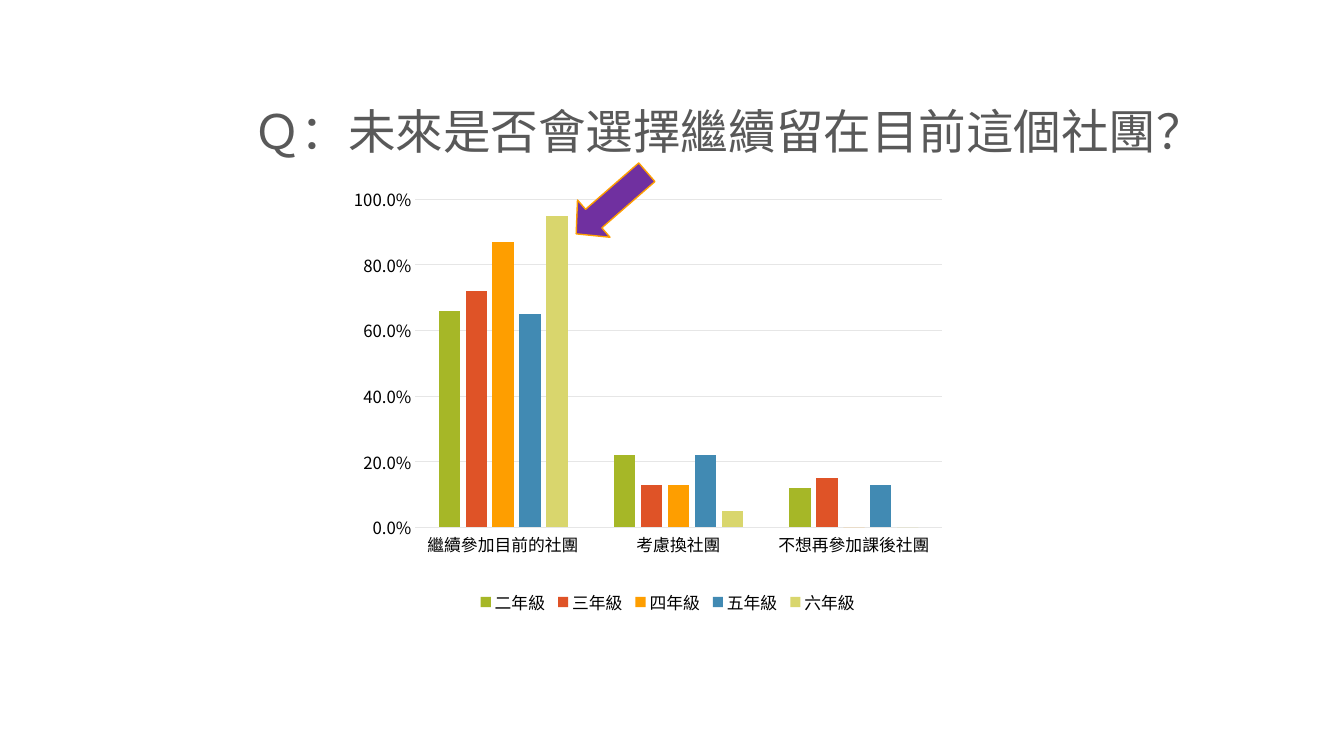
from pptx import Presentation
from pptx.chart.data import CategoryChartData
from pptx.dml.color import RGBColor
from pptx.enum.chart import XL_CHART_TYPE, XL_LEGEND_POSITION, XL_TICK_MARK
from pptx.enum.shapes import MSO_SHAPE
from pptx.enum.text import MSO_ANCHOR, MSO_AUTO_SIZE, PP_ALIGN
from pptx.oxml import parse_xml
from pptx.oxml.ns import nsdecls, qn
from pptx.util import Inches, Pt

GRADES = {
    "二年級": ("A6B727", (0.66, 0.22, 0.12)),
    "三年級": ("DF5327", (0.72, 0.13, 0.15)),
    "四年級": ("FE9E00", (0.87, 0.13, 0)),
    "五年級": ("418AB3", (0.65, 0.22, 0.13)),
    "六年級": ("D9D66D", (0.95, 0.05, 0)),
}
CHOICES = ("繼續參加目前的社團", "考慮換社團", "不想再參加課後社團")


def rgb(hex_color):
    return RGBColor.from_string(hex_color)


def box(*lengths):
    return [Inches(n) for n in lengths]


class SlideBuilder:
    FONT = "Noto Sans CJK SC"
    TITLE, TEXT, GRID = "595959", "000000", "E6E6E6"

    def __init__(self, prs):
        self.slide = prs.slides.add_slide(prs.slide_layouts[5])

    def style_font(self, font, size, color):
        font.size, font.name = Pt(size), self.FONT
        font.color.rgb = rgb(color)

    def set_east_asian(self, rPr):
        rPr.append(parse_xml(f'<a:ea {nsdecls("a")} typeface="{self.FONT}"/>'))

    def style_line(self, line, color, width):
        line.color.rgb = rgb(color)
        line.width = Pt(width)

    def title(self, text, left, top, width, height):
        sp = self.slide.shapes.title
        sp.left, sp.top, sp.width, sp.height = box(left, top, width, height)
        tf = sp.text_frame
        tf.word_wrap = True
        tf.auto_size = MSO_AUTO_SIZE.NONE
        tf.vertical_anchor = MSO_ANCHOR.BOTTOM
        p = tf.paragraphs[0]
        p.alignment, p.line_spacing = PP_ALIGN.LEFT, 0.9
        r = p.add_run()
        r.text = text
        self.style_font(r.font, 34, self.TITLE)
        self.set_east_asian(r.font._element)

    def layout(self, x, y, w, h, inner=False):
        target = '<c:layoutTarget val="inner"/>' if inner else ""
        modes = '<c:xMode val="edge"/><c:yMode val="edge"/>'
        sizes = "".join(f'<c:{tag} val="{val}"/>' for tag, val in zip("xywh", (x, y, w, h)))
        return parse_xml(f'<c:layout {nsdecls("c")}><c:manualLayout>{target}{modes}{sizes}'
                         "</c:manualLayout></c:layout>")

    def column_chart(self, categories, series, left, top, width, height):
        data = CategoryChartData(number_format="0.0%")
        data.categories = categories
        for name, (_, values) in series.items():
            data.add_series(name, values)
        chart = self.slide.shapes.add_chart(
            XL_CHART_TYPE.COLUMN_CLUSTERED, *box(left, top, width, height), data).chart
        chart.has_title = False
        self.style_font(chart.font, 12, self.TEXT)

        # Columns
        plot = chart.plots[0]
        plot.gap_width, plot.overlap, plot.vary_by_categories = 219, -27, False
        for ser, (color, _) in zip(plot.series, series.values()):
            ser.format.fill.solid()
            ser.format.fill.fore_color.rgb = rgb(color)

        # Axes
        for axis in (chart.category_axis, chart.value_axis):
            axis.major_tick_mark = axis.minor_tick_mark = XL_TICK_MARK.NONE
            self.style_font(axis.tick_labels.font, 12, self.TEXT)
        self.style_line(chart.category_axis.format.line, self.GRID, 0.75)
        val = chart.value_axis
        val.minimum_scale, val.maximum_scale, val.major_unit = 0, 1, 0.2
        val.format.line.fill.background()
        val.tick_labels.number_format = "0.0%"
        val.tick_labels.number_format_is_linked = False
        self.style_line(val.major_gridlines.format.line, self.GRID, 0.75)

        # Legend
        chart.has_legend = True
        legend = chart.legend
        legend.position = XL_LEGEND_POSITION.BOTTOM
        legend.include_in_layout = False
        self.style_font(legend.font, 12, self.TEXT)

        # Manual placement and East Asian typeface
        root = chart._chartSpace
        area = root.find(".//" + qn("c:plotArea"))
        for old in area.findall(qn("c:layout")):
            area.remove(old)
        area.insert(0, self.layout(0.116, 0.061, 0.853, 0.606, inner=True))
        legend_pos = root.find(".//" + qn("c:legendPos"))
        legend_pos.addnext(self.layout(0.21, 0.77, 0.63, 0.07))
        for rPr in root.iter(qn("a:defRPr")):
            self.set_east_asian(rPr)

    def arrow(self, left, top, width, height, rotation, fill, line):
        sp = self.slide.shapes.add_shape(MSO_SHAPE.DOWN_ARROW, *box(left, top, width, height))
        sp.shadow.inherit = False
        sp.rotation = rotation
        sp.adjustments[0], sp.adjustments[1] = 0.5, 0.47
        sp.fill.solid()
        sp.fill.fore_color.rgb = rgb(fill)
        self.style_line(sp.line, line, 1)


def main():
    prs = Presentation()
    prs.slide_width, prs.slide_height = box(13.33, 7.5)
    s = SlideBuilder(prs)
    s.title("Ｑ：未來是否會選擇繼續留在目前這個社團？", 2.41, 0.33, 10.25, 1.31)
    s.column_chart(CHOICES, GRADES, 3.41, 1.65, 6.12, 5.37)
    s.arrow(5.82, 1.55, 0.49, 0.93, 48.9, "7030A0", "FE9E00")
    prs.save("out.pptx")


if __name__ == "__main__":
    main()
